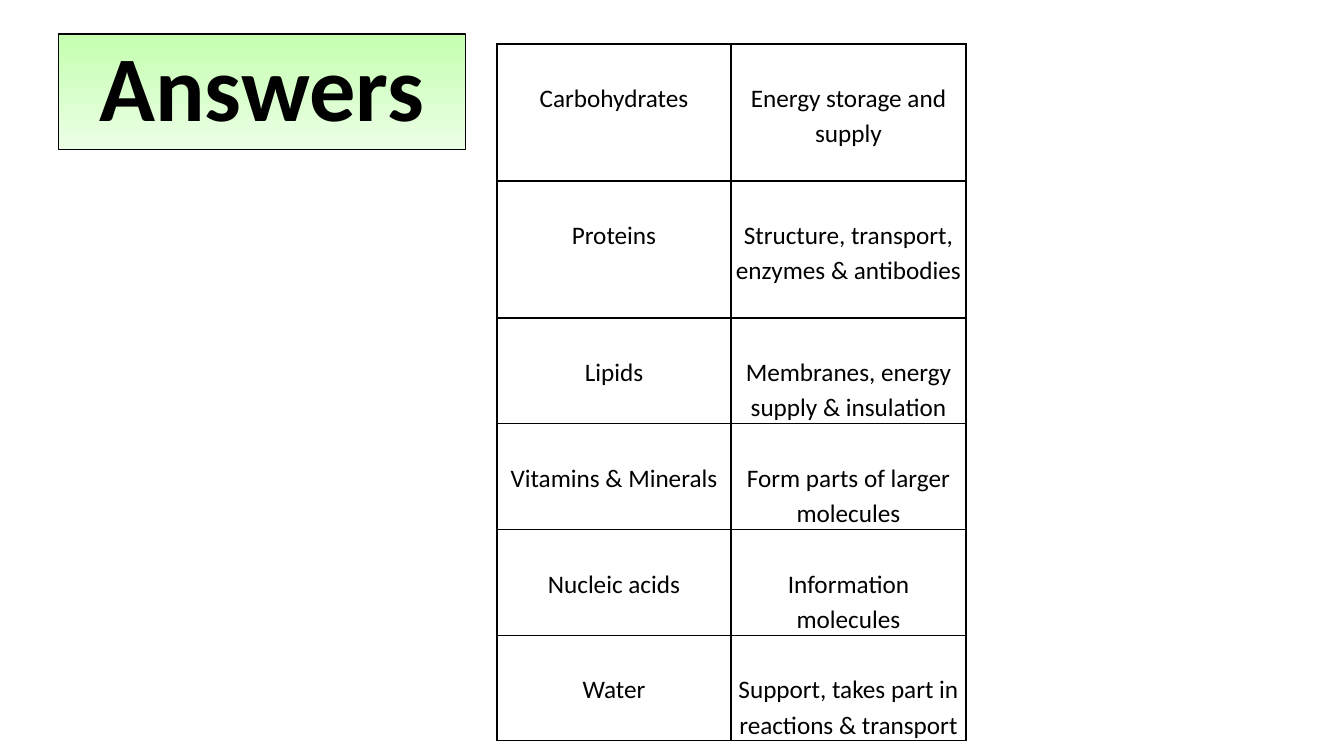
from dataclasses import dataclass

from lxml import etree
from pptx import Presentation
from pptx.dml.color import RGBColor
from pptx.enum.shapes import MSO_SHAPE
from pptx.enum.text import MSO_ANCHOR, PP_ALIGN
from pptx.oxml.ns import qn
from pptx.util import Emu, Pt

RECTANGLE = MSO_SHAPE.RECTANGLE
CENTER = PP_ALIGN.CENTER
MIDDLE = MSO_ANCHOR.MIDDLE
TOP = MSO_ANCHOR.TOP

EMU_PER_PX = 914400 / 100.8
BLANK_LAYOUT = 6


@dataclass(frozen=True)
class Theme:
    font: str = "Calibri"
    ink: str = "000000"
    title_top: str = "C4FFAF"
    title_bottom: str = "ECFFE7"
    title_size: int = 66
    cell_size: int = 18
    title_border: float = 0.75
    cell_border: int = 1


THEME = Theme()

ANSWERS = [
    ("Carbohydrates", "Energy storage and supply"),
    ("Proteins", "Structure, transport, enzymes & antibodies"),
    ("Lipids", "Membranes, energy supply & insulation"),
    ("Vitamins & Minerals", "Form parts of larger molecules"),
    ("Nucleic acids", "Information molecules"),
    ("Water", "Support, takes part in reactions & transport"),
]
COLUMN_WIDTHS = [234, 235]
ROW_HEIGHTS = [137, 137, 101, 102, 101, 102]


def px(length):
    return Emu(round(length * EMU_PER_PX))


def color(value):
    return RGBColor.from_string(value)


def set_text(text_frame, text, size, line_spacing, bold=False):
    text_frame.text = text
    paragraph = text_frame.paragraphs[0]
    paragraph.alignment = CENTER
    paragraph.line_spacing = line_spacing
    font = paragraph.runs[0].font
    font.name = THEME.font
    font.size = Pt(size)
    font.bold = bold
    font.color.rgb = color(THEME.ink)


def add_title(slide, text, left, top, width, height):
    shape = slide.shapes.add_shape(RECTANGLE, px(left), px(top), px(width), px(height))
    shape.shadow.inherit = False
    shape.fill.gradient()
    shape.fill.gradient_angle = 270  # counter-clockwise, so the fill runs downwards
    for stop, value in zip(shape.fill.gradient_stops, (THEME.title_top, THEME.title_bottom)):
        stop.color.rgb = color(value)
    shape.line.color.rgb = color(THEME.ink)
    shape.line.width = Pt(THEME.title_border)
    shape.text_frame.word_wrap = True
    shape.text_frame.vertical_anchor = MIDDLE
    set_text(shape.text_frame, text, THEME.title_size, 0.9, bold=True)


def add_borders(cell):
    properties = cell._tc.get_or_add_tcPr()
    for side in ("a:lnL", "a:lnR", "a:lnT", "a:lnB"):
        line = etree.SubElement(properties, qn(side), w=str(Pt(THEME.cell_border)))
        fill = etree.SubElement(line, qn("a:solidFill"))
        etree.SubElement(fill, qn("a:srgbClr"), val=THEME.ink)


def format_cell(cell, text):
    cell.margin_left = cell.margin_right = px(5)
    cell.margin_top = px(35)  # one line of space above the text
    cell.margin_bottom = 0
    cell.vertical_anchor = TOP
    add_borders(cell)
    cell.fill.background()
    set_text(cell.text_frame, text, THEME.cell_size, 1.15)


def add_answer_table(slide, left, top):
    table = slide.shapes.add_table(
        len(ANSWERS), len(COLUMN_WIDTHS), px(left), px(top),
        px(sum(COLUMN_WIDTHS)), px(sum(ROW_HEIGHTS)),
    ).table
    table.first_row = False
    table.horz_banding = False
    for column, width in zip(table.columns, COLUMN_WIDTHS):
        column.width = px(width)
    for row, height, texts in zip(table.rows, ROW_HEIGHTS, ANSWERS):
        row.height = px(height)
        for cell, text in zip(row.cells, texts):
            format_cell(cell, text)


def main():
    presentation = Presentation()
    presentation.slide_width = px(1344)
    presentation.slide_height = px(756)
    slide = presentation.slides.add_slide(presentation.slide_layouts[BLANK_LAYOUT])

    # Molecules and their roles
    add_answer_table(slide, 497, 44)

    # Heading
    add_title(slide, "Answers", 58, 34, 408, 116)

    presentation.save("out.pptx")


if __name__ == "__main__":
    main()
